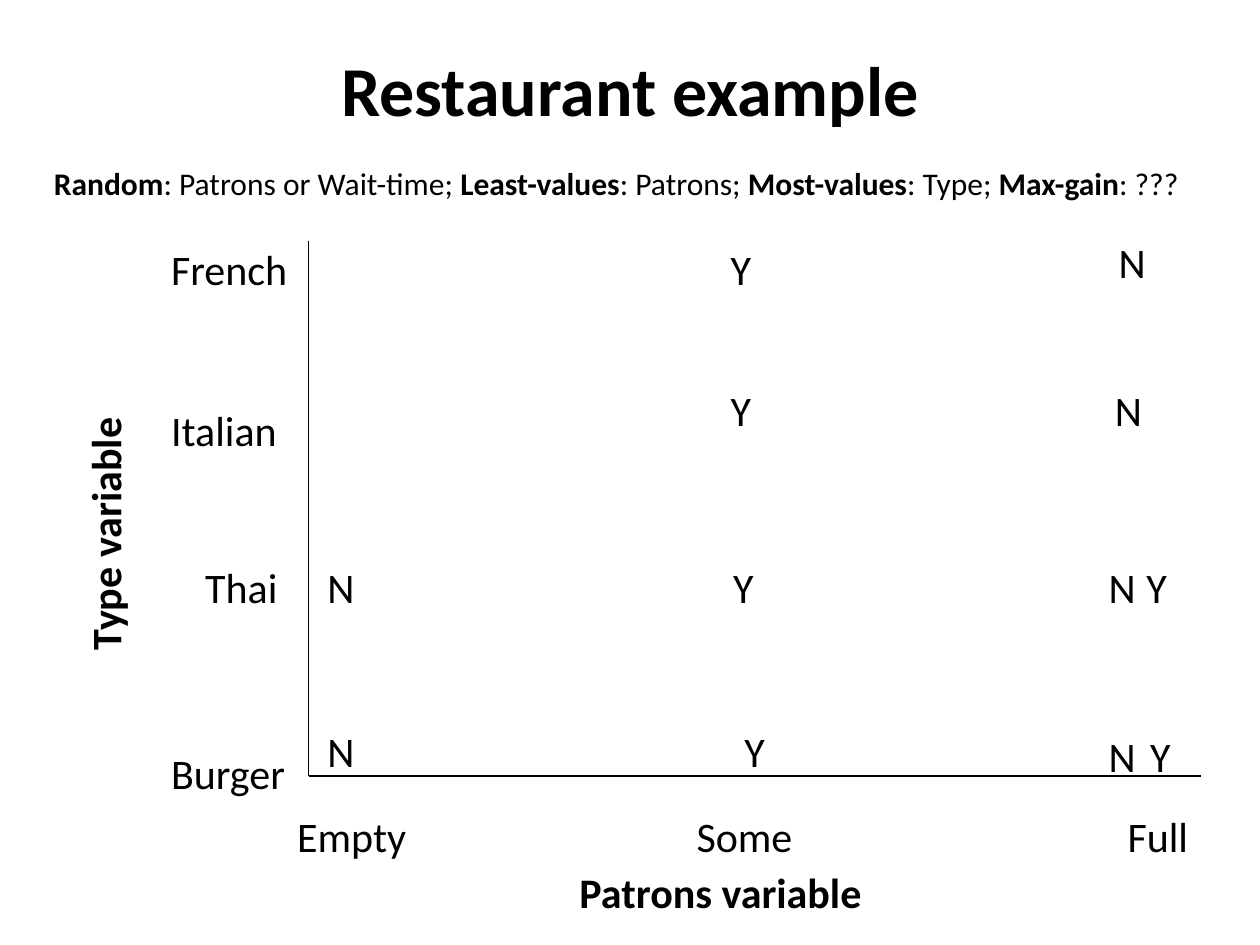
"""Build the restaurant example slide on a grid of 100 columns by 75 rows."""
from pptx import Presentation, util as u
from pptx.dml.color import RGBColor
from pptx.enum import shapes, text
from pptx.oxml.ns import qn
from lxml import etree

BLACK = RGBColor(0, 0, 0)
FONT = "Calibri"
CELL = u.Inches(0.1)
COLS, ROWS = 100, 75
HIGH = 5.1
WIDE = {"N": 4.2, "Y": 3.7}

TYPES = [("French", 12.6, 18.8, 11.3), ("Italian", 12.6, 31.6, 10.5),
         ("Thai", 15.3, 44.1, 7.8), ("Burger", 12.6, 58.8, 11.3)]
LEVELS = [("Empty", 22.6, 10.9), ("Some", 54.3, 9.7), ("Full", 88.5, 6.9)]
MARKS = [("Y", 57, 18.8), ("N", 87.8, 18.3),
         ("Y", 57, 30), ("N", 87.5, 30),
         ("N", 25, 44.1), ("Y", 57.2, 44.1), ("N", 87, 44.1), ("Y", 90, 44.1),
         ("N", 25, 57.1), ("Y", 58.1, 57.1), ("N", 87, 57.5), ("Y", 90.3, 57.5)]
RULES = [("Random", ": Patrons or Wait-time; "), ("Least-values", ": Patrons; "),
         ("Most-values", ": Type; "), ("Max-gain", ": ???")]


def grid(*cells):
    """Turn grid cells into slide lengths."""
    return [round(cell * CELL) for cell in cells]


def style(para, size, bold=None):
    """Set the font of a paragraph."""
    font = para.font
    font.name, font.size, font.bold = FONT, u.Pt(size), bold
    font.color.rgb = BLACK


def add_text(tree, words, x, y, w, h=HIGH, size=24, bold=None):
    """Add a one-line text box that fits its words."""
    box = tree.add_textbox(*grid(x, y, w, h))
    frame = box.text_frame
    frame.word_wrap = False
    frame.auto_size = text.MSO_AUTO_SIZE.SHAPE_TO_FIT_TEXT
    para = frame.paragraphs[0]
    para.text = words
    style(para, size, bold)
    return box


def add_line(tree, *ends):
    """Add a thin axis line."""
    line = tree.add_connector(shapes.MSO_CONNECTOR.STRAIGHT, *grid(*ends))
    line.line.color.rgb = BLACK
    line.line.width = u.Pt(0.75)
    etree.SubElement(line.element.spPr, qn("a:effectLst"))


def add_title(slide, words):
    """Place and format the title."""
    title = slide.shapes.title
    title.left, title.top, title.width, title.height = grid(7.5, 0.8, 85, 12.5)
    frame = title.text_frame
    frame.text = words
    frame.vertical_anchor = text.MSO_ANCHOR.MIDDLE
    para = frame.paragraphs[0]
    para.alignment = text.PP_ALIGN.CENTER
    style(para, 40, True)


def add_rules(tree):
    """Add the line of rules with bold names."""
    box = add_text(tree, "", 3.3, 12.5, 93.9, 4, 18)
    para = box.text_frame.paragraphs[0]
    for name, pick in RULES:
        for words, bold in ((name, True), (pick, False)):
            run = para.add_run()
            run.text = words
            run.font.bold = bold


def add_plot(tree):
    """Add the axes, their labels and the marks."""
    left, top, right, base = 24.5, 19.1, 95.3, 61.6
    add_line(tree, left, top, left, base)
    add_line(tree, left, base, right, base)
    for name, x, y, w in TYPES:
        add_text(tree, name, x, y, w)
    for name, x, w in LEVELS:
        add_text(tree, name, x, 63.8, w)
    for mark, x, y in MARKS:
        add_text(tree, mark, x, y, WIDE[mark])


def main():
    """Build and save the slide."""
    deck = Presentation()
    deck.slide_width, deck.slide_height = grid(COLS, ROWS)
    slide = deck.slides.add_slide(deck.slide_layouts[5])
    tree = slide.shapes
    add_title(slide, "Restaurant example")
    add_plot(tree.add_group_shape().shapes)
    add_rules(tree)
    add_text(tree, "Patrons variable", 45, 68.3, 25.8, bold=True)
    side = add_text(tree, "Type variable", 5.8, 32.8, 6.1, 19.8, bold=True)
    side.element.txBody.bodyPr.set("vert", "vert270")
    deck.save("out.pptx")


if __name__ == "__main__":
    main()
